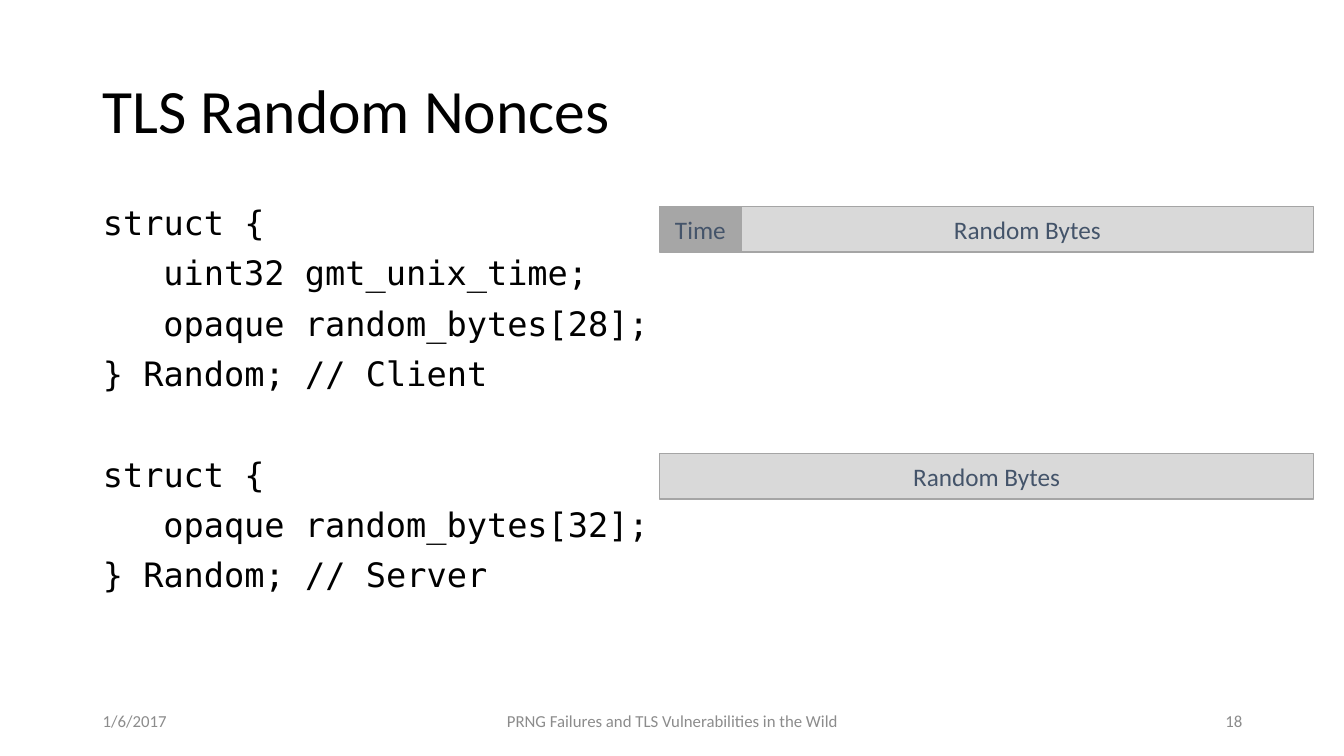
from dataclasses import dataclass

from lxml.etree import SubElement
from pptx import Presentation
from pptx.dml.color import RGBColor
from pptx.enum.shapes import MSO_SHAPE
from pptx.enum.text import MSO_ANCHOR, MSO_AUTO_SIZE, PP_ALIGN
from pptx.oxml.ns import qn
from pptx.util import Inches, Pt


@dataclass(frozen=True)
class Theme:
    text_font: str = "Calibri"
    code_font: str = "DejaVu Sans Mono"
    black: str = "000000"
    label: str = "44546A"
    muted: str = "8C8C8C"
    time_fill: str = "A6A6A6"
    random_fill: str = "D9D9D9"
    outline: str = "A5A5A5"
    title_size: int = 44
    code_size: int = 24
    label_size: int = 18
    footer_size: int = 12


THEME = Theme()
TITLE = "TLS Random Nonces"
STRUCTS = [
    ["struct {", ("uint32 gmt_unix_time;",), ("opaque random_bytes[28];",), "} Random; // Client"],
    ["struct {", ("opaque random_bytes[32];",), "} Random; // Server"],
]
NONCES = [
    (2.05, [("Time", 4, THEME.time_fill), ("Random Bytes", 28, THEME.random_fill)]),
    (4.5, [("Random Bytes", 32, THEME.random_fill)]),
]
FOOTERS = [
    ("1/6/2017", 0.92, 3, PP_ALIGN.LEFT),
    ("PRNG Failures and TLS Vulnerabilities in the Wild", 4.42, 4.5, PP_ALIGN.CENTER),
    ("18", 9.42, 3, PP_ALIGN.RIGHT),
]
MARGIN, CONTENT_WIDTH = 0.92, 11.5
BAR_LEFT, BAR_WIDTH, BAR_HEIGHT, NONCE_BYTES = 6.54, 6.49, 0.45, 32
CODE_INDENT, LINE_GAP, STRUCT_GAP = 0.6, 10, 46


def write(para, text, *, size, color, font=THEME.text_font, align=PP_ALIGN.LEFT,
          line_spacing=1.0, before=0):
    para.alignment = align
    para.line_spacing = line_spacing
    para.space_before = Pt(before)
    span = para.add_run()
    span.text = text
    span.font.name = font
    span.font.size = Pt(size)
    span.font.color.rgb = RGBColor.from_string(color)


def place(shape, left, top, width, height):
    shape.left, shape.top = Inches(left), Inches(top)
    shape.width, shape.height = Inches(width), Inches(height)


def prepare(shape, anchor):
    frame = shape.text_frame
    frame.word_wrap = True
    frame.auto_size = MSO_AUTO_SIZE.NONE
    frame.vertical_anchor = anchor
    return frame


def add_title(page):
    place(page.shapes.title, MARGIN, 0.4, CONTENT_WIDTH, 1.45)
    frame = prepare(page.shapes.title, MSO_ANCHOR.MIDDLE)
    write(frame.paragraphs[0], TITLE, size=THEME.title_size, color=THEME.black, line_spacing=0.9)


def add_code(page):
    body = page.placeholders[1]
    place(body, MARGIN, 2, CONTENT_WIDTH, 4.76)
    frame = prepare(body, MSO_ANCHOR.TOP)
    para = frame.paragraphs[0]
    for block, lines in enumerate(STRUCTS):
        for row, line in enumerate(lines):
            if block or row:
                para = frame.add_paragraph()
            is_field = isinstance(line, tuple)
            write(para, line[0] if is_field else line, size=THEME.code_size,
                  color=THEME.black, font=THEME.code_font, line_spacing=0.9,
                  before=STRUCT_GAP if block and not row else LINE_GAP)
            properties = para._p.get_or_add_pPr()
            properties.set("marL", str(Inches(CODE_INDENT if is_field else 0)))
            properties.set("indent", "0")
            SubElement(properties, qn("a:buNone"))


def add_nonce(page, top, fields):
    left = BAR_LEFT
    for text, size, fill in fields:
        width = BAR_WIDTH * size / NONCE_BYTES
        box = page.shapes.add_shape(MSO_SHAPE.RECTANGLE, Inches(left), Inches(top),
                                    Inches(width), Inches(BAR_HEIGHT))
        box.shadow.inherit = False
        box.fill.solid()
        box.fill.fore_color.rgb = RGBColor.from_string(fill)
        box.line.color.rgb = RGBColor.from_string(THEME.outline)
        box.line.width = Pt(1)
        frame = prepare(box, MSO_ANCHOR.MIDDLE)
        write(frame.paragraphs[0], text, size=THEME.label_size,
              color=THEME.label, align=PP_ALIGN.CENTER)
        left += width


def add_footer(page, text, left, width, align):
    box = page.shapes.add_textbox(Inches(left), Inches(6.95), Inches(width), Inches(0.4))
    frame = prepare(box, MSO_ANCHOR.MIDDLE)
    write(frame.paragraphs[0], text, size=THEME.footer_size, color=THEME.muted, align=align)


def main():
    deck = Presentation()
    deck.slide_width, deck.slide_height = Inches(13.33), Inches(7.5)
    page = deck.slides.add_slide(deck.slide_layouts[1])
    add_title(page)
    add_code(page)
    for top, fields in NONCES:
        add_nonce(page, top, fields)
    for footer in FOOTERS:
        add_footer(page, *footer)
    deck.save("out.pptx")


if __name__ == "__main__":
    main()
